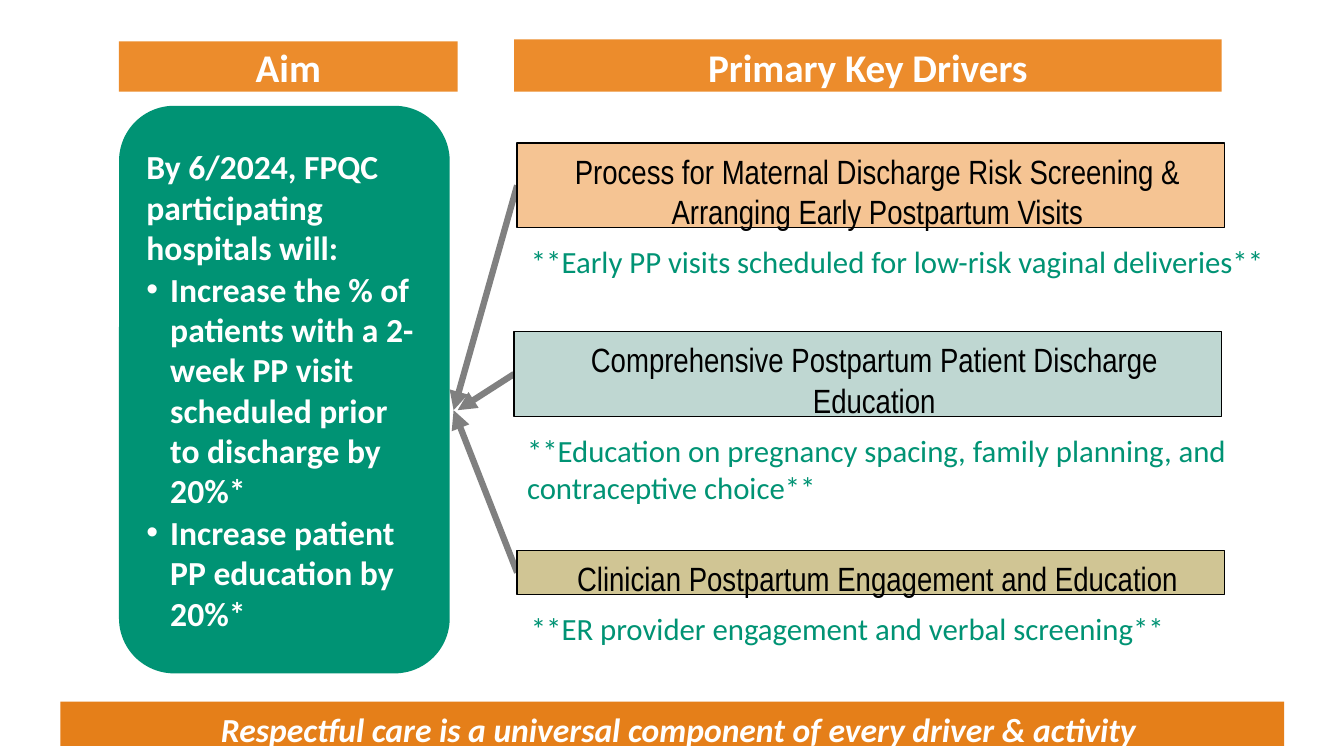
from lxml import etree
from pptx import Presentation
from pptx import util as u
from pptx.dml.color import RGBColor
from pptx.enum import shapes, text
from pptx.oxml import ns

WHITE = RGBColor(0xFF, 0xFF, 0xFF)
BLACK = RGBColor(0x00, 0x00, 0x00)
GRAY = RGBColor(0x80, 0x80, 0x80)
GREEN = RGBColor(0x00, 0x93, 0x74)
ORANGE = RGBColor(0xEC, 0x8C, 0x2C)
DARK_ORANGE = RGBColor(0xE5, 0x7F, 0x19)
PEACH = RGBColor(0xF5, 0xC4, 0x93)
TEAL = RGBColor(0xBF, 0xD7, 0xD2)
KHAKI = RGBColor(0xD0, 0xC5, 0x94)

# Content
AIM_INTRO = "By 6/2024, FPQC participating hospitals will:"
AIM_GOALS = [
    "Increase the % of patients with a 2-week PP visit scheduled prior to discharge by 20%*",
    "Increase patient PP education by 20%*",
]
# Driver, fill, left, top, height, arrow end x, note, note left, note height
DRIVERS = [
    ("Process for Maternal Discharge Risk Screening & Arranging Early Postpartum Visits",
     PEACH, 369.4, 102.2, 60.5, 324,
     "**Early PP visits scheduled for low-risk vaginal deliveries**", 372.2, 33.8),
    ("Comprehensive Postpartum Patient Discharge Education",
     TEAL, 367.2, 236.9, 60.5, 326.9,
     "**Education on pregnancy spacing, family planning, and contraceptive choice**", 369.4, 60.5),
    ("Clinician Postpartum Engagement and Education",
     KHAKI, 369.4, 393.1, 31.7, 324,
     "**ER provider engagement and verbal screening**", 372.2, 33.8),
]
BANNER = "Respectful care is a universal component of every driver & activity"

# Layout
DRIVER_WIDTH = 505.4
NOTE_WIDTH = 604.8
NOTE_GAP = 7.4
ARROW_END_Y = 293

presentation = Presentation()
presentation.slide_width, presentation.slide_height = u.Pt(960), u.Pt(540)
slide = presentation.slides.add_slide(presentation.slide_layouts[6])


def add_box(box, fill, line=None, kind=shapes.MSO_SHAPE.RECTANGLE):
    shape = slide.shapes.add_shape(kind, *map(u.Pt, box))
    shape.shadow.inherit = False
    shape.fill.solid()
    shape.fill.fore_color.rgb = fill
    if line is None:
        shape.line.fill.background()
    else:
        shape.line.color.rgb = line
        shape.line.width = u.Pt(0.96)
    shape.text_frame.word_wrap = True
    return shape


def set_tight_insets(frame, top):
    frame.margin_left = frame.margin_right = frame.margin_bottom = 0
    frame.margin_top = u.Pt(top)
    frame.vertical_anchor = text.MSO_ANCHOR.TOP


def write(paragraph, words, size, color, font="Calibri", bold=False, italic=False,
          align=text.PP_ALIGN.LEFT, margin=0):
    paragraph.alignment = align
    if margin:
        paragraph._p.get_or_add_pPr().set("marL", str(u.Pt(margin)))
    run = paragraph.add_run()
    run.text = words
    run.font.name, run.font.size = font, u.Pt(size)
    run.font.bold, run.font.italic = bold, italic
    run.font.color.rgb = color


def add_bullet(paragraph):
    properties = paragraph._p.get_or_add_pPr()
    properties.set("indent", str(u.Pt(-17)))
    etree.SubElement(properties, ns.qn("a:buFont"), typeface="Arial")
    etree.SubElement(properties, ns.qn("a:buChar"), char="•")


def add_arrow(start_x, start_y, end_x, end_y):
    arrow = slide.shapes.add_connector(
        shapes.MSO_CONNECTOR.STRAIGHT, *map(u.Pt, (start_x, start_y, end_x, end_y)))
    arrow.line.color.rgb = GRAY
    arrow.line.width = u.Pt(4.5)
    etree.SubElement(arrow.line._get_or_add_ln(), ns.qn("a:tailEnd"), type="triangle")
    etree.SubElement(arrow._element.spPr, ns.qn("a:effectLst"))


CENTER = text.PP_ALIGN.CENTER

# Bottom banner
banner = add_box((43.2, 501.1, 874.1, 31.7), DARK_ORANGE)
set_tight_insets(banner.text_frame, 5.4)
write(banner.text_frame.paragraphs[0], BANNER, 24, WHITE,
      bold=True, italic=True, align=CENTER, margin=9)

# Column headers
aim_header = add_box((85, 29.5, 241.9, 36), ORANGE)
aim_header.text_frame.vertical_anchor = text.MSO_ANCHOR.MIDDLE
drivers_header = add_box((367.2, 28.1, DRIVER_WIDTH, 37.4), ORANGE)
set_tight_insets(drivers_header.text_frame, 2.9)
for header, words in ((aim_header, "Aim"), (drivers_header, "Primary Key Drivers")):
    write(header.text_frame.paragraphs[0], words, 28, WHITE, bold=True, align=CENTER)

# Aim panel
aim = add_box((85, 75.6, 236.2, 405.4), GREEN, kind=shapes.MSO_SHAPE.ROUNDED_RECTANGLE)
aim.text_frame.vertical_anchor = text.MSO_ANCHOR.MIDDLE
write(aim.text_frame.paragraphs[0], AIM_INTRO, 24, WHITE, bold=True, margin=1)
for goal in AIM_GOALS:
    paragraph = aim.text_frame.add_paragraph()
    paragraph.space_before = u.Pt(1)
    add_bullet(paragraph)
    write(paragraph, goal, 24, WHITE, bold=True, margin=18)

# Drivers with their arrows and notes
for driver, fill, left, top, height, end_x, note, note_left, note_height in DRIVERS:
    add_arrow(left, top + height / 2, end_x, ARROW_END_Y)
    box = add_box((left, top, DRIVER_WIDTH, height), fill, BLACK)
    set_tight_insets(box.text_frame, 5.4)
    write(box.text_frame.paragraphs[0], driver, 24, BLACK, "Arial Narrow",
          align=CENTER, margin=9)
    note_box = slide.shapes.add_textbox(
        *map(u.Pt, (note_left, top + height + NOTE_GAP, NOTE_WIDTH, note_height)))
    note_box.text_frame.word_wrap = True
    write(note_box.text_frame.paragraphs[0], note, 22, GREEN)

presentation.save("out.pptx")
